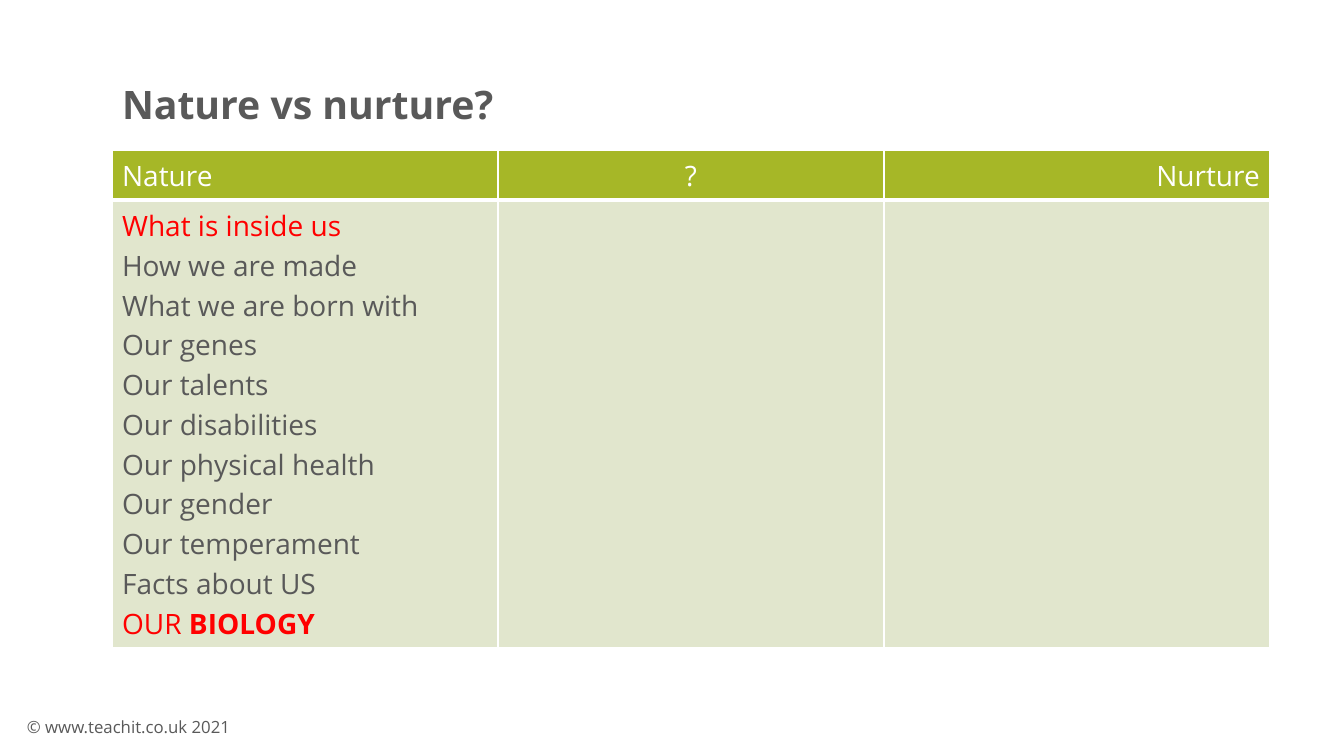
"""Build the nature and nurture comparison slide."""
from lxml import etree
from pptx import Presentation
from pptx import util as u
from pptx.dml.color import RGBColor
from pptx.enum import text
from pptx.oxml.ns import qn

GREY, RED, WHITE = "595959", "FF0000", "FFFFFF"
GREEN, PALE = "A6B727", "E1E6CD"
ALIGN = text.PP_ALIGN
TITLE = "Nature vs nurture?"
FOOTER = "© www.teachit.co.uk 2021"
HEADS = [("Nature", ALIGN.LEFT), ("?", ALIGN.CENTER), ("Nurture", ALIGN.RIGHT)]
FACTS = [
    ("What is inside us", RED),
    ("How we are made", GREY),
    ("What we are born with", GREY),
    ("Our genes", GREY),
    ("Our talents", GREY),
    ("Our disabilities", GREY),
    ("Our physical health", GREY),
    ("Our gender", GREY),
    ("Our temperament", GREY),
    ("Facts about US", GREY),
    ("OUR ", RED),
]
LAST = "BIOLOGY"
COL, ROWS = 386, (50, 447)


def px(n):
    """Turn pixels into EMU."""
    return u.Emu(round(n * 914400 / 100.8))


def rgb(code):
    """Turn a hex string into a colour."""
    return RGBColor.from_string(code)


def write(para, words, size=20, color=GREY, bold=False, align=ALIGN.LEFT, line=None):
    """Add a formatted run to a paragraph."""
    run = para.add_run()
    run.text = words
    font = run.font
    font.name, font.size, font.bold = "Open Sans", u.Pt(size), bold
    font.color.rgb = rgb(color)
    para.alignment = align
    if line:
        para.line_spacing = u.Pt(line)


def paint(cell, fill, base):
    """Fill a cell and give it white borders."""
    cell.fill.solid()
    cell.fill.fore_color.rgb = rgb(fill[0])
    props = cell._tc.get_or_add_tcPr()
    for i, (side, width) in enumerate(zip(("lnL", "lnR", "lnT", "lnB"), (1, 1, fill[1], base))):
        edge = etree.Element(qn("a:" + side), w=str(u.Pt(width)))
        solid = etree.SubElement(edge, qn("a:solidFill"))
        etree.SubElement(solid, qn("a:srgbClr"), val=WHITE)
        props.insert(i, edge)


def main():
    """Lay out the slide and save it."""
    deck = Presentation()
    deck.slide_width, deck.slide_height = px(1344), px(756)
    slide = deck.slides.add_slide(deck.slide_layouts[5])

    title = slide.shapes.title
    title.left, title.top, title.width, title.height = map(px, (112, 85, 959, 47))
    frame = title.text_frame
    frame.auto_size = text.MSO_AUTO_SIZE.NONE
    frame.word_wrap = True
    frame.vertical_anchor = text.MSO_ANCHOR.BOTTOM
    write(frame.paragraphs[0], TITLE, size=28, bold=True, line=36.8)

    box = slide.shapes.add_textbox(*map(px, (17, 712, 234, 30)))
    box.text_frame.word_wrap = True
    write(box.text_frame.paragraphs[0], FOOTER, size=12)

    place = map(px, (112, 150, COL * len(HEADS), sum(ROWS)))
    table = slide.shapes.add_table(len(ROWS), len(HEADS), *place).table
    for row, high in zip(table.rows, ROWS):
        row.height = px(high)
    for i, (head, align) in enumerate(HEADS):
        table.columns[i].width = px(COL)
        top, body = table.cell(0, i), table.cell(1, i)
        paint(top, (GREEN, 1), 3)
        paint(body, (PALE, 3), 1)
        write(top.text_frame.paragraphs[0], head, color=WHITE, align=align, line=28.4)

    frame = table.cell(1, 0).text_frame
    for i, (fact, color) in enumerate(FACTS):
        para = frame.add_paragraph() if i else frame.paragraphs[0]
        write(para, fact, color=color, line=28.4)
    write(para, LAST, color=RED, bold=True, line=28.4)
    deck.save("out.pptx")


if __name__ == "__main__":
    main()
